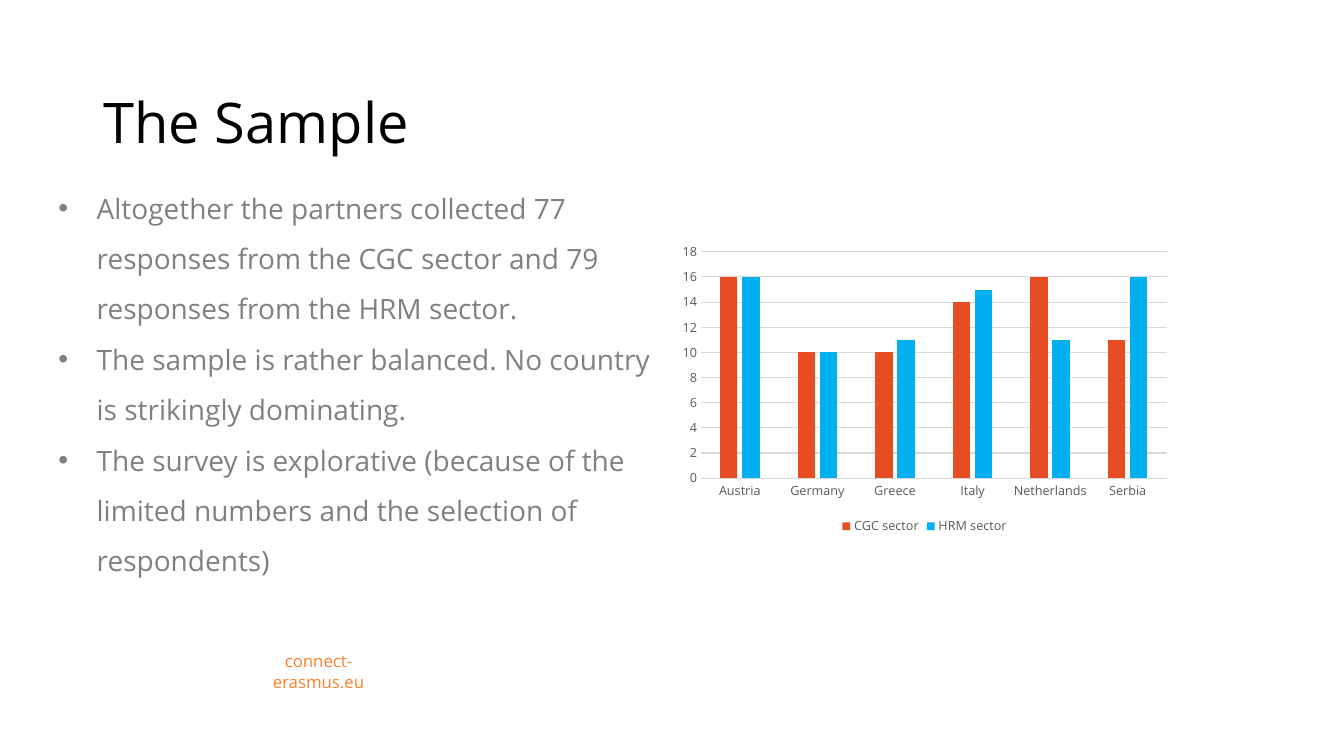
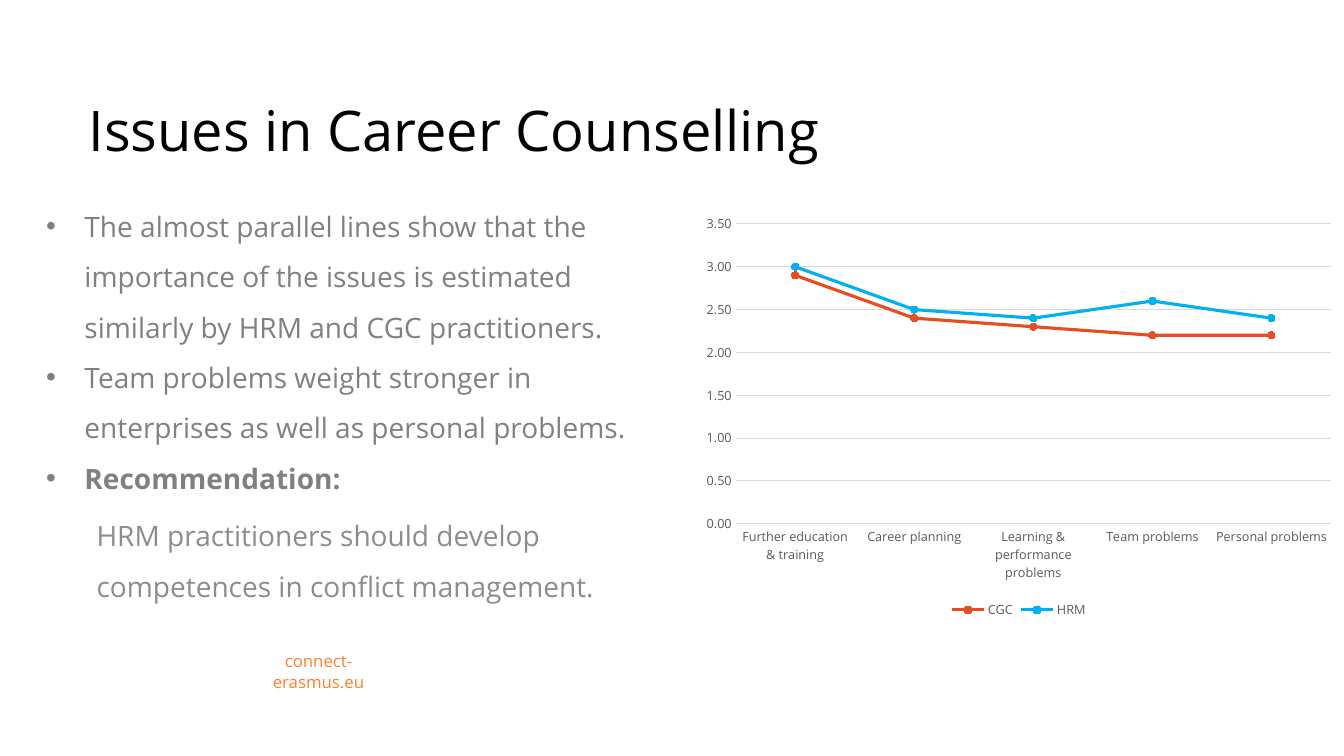
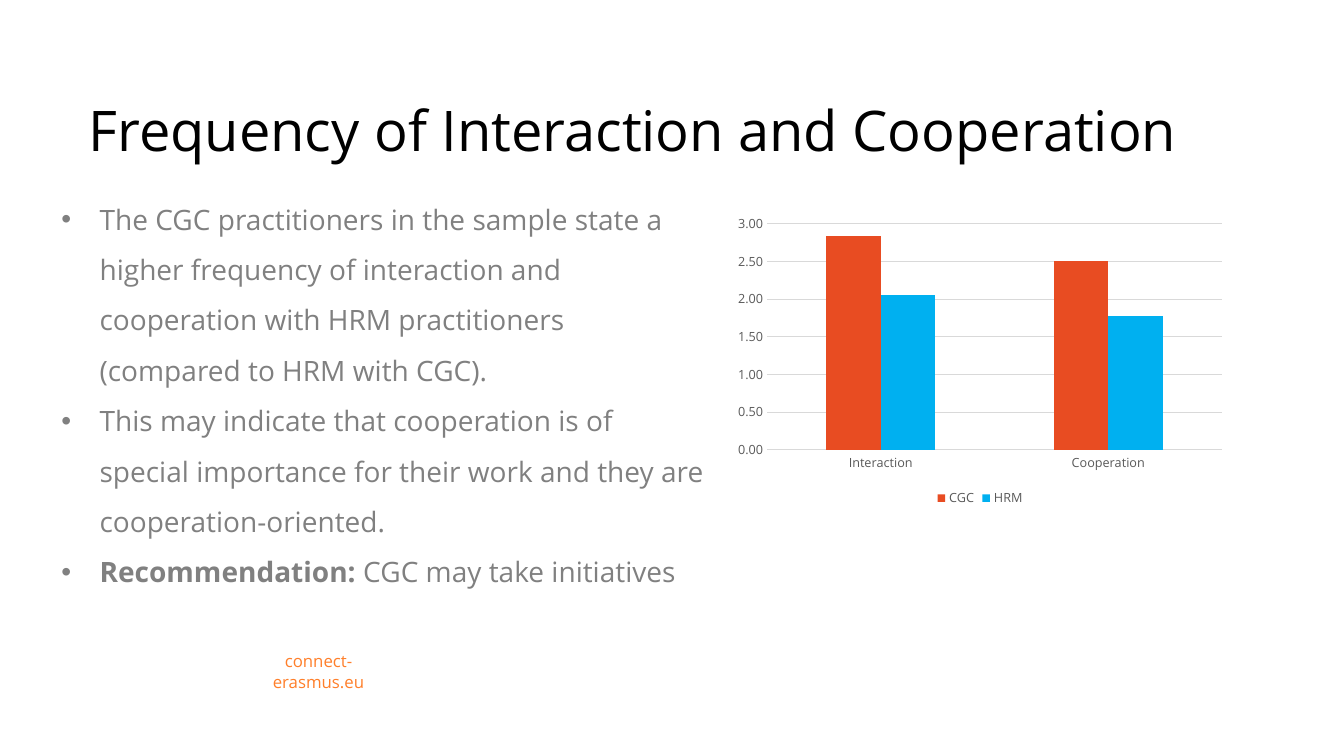
from lxml.etree import SubElement
from pptx import Presentation
from pptx.chart.data import CategoryChartData
from pptx.dml.color import RGBColor
from pptx.enum.chart import (XL_CHART_TYPE, XL_LEGEND_POSITION,
                             XL_MARKER_STYLE, XL_TICK_MARK)
from pptx.enum.text import MSO_ANCHOR, PP_ALIGN
from pptx.oxml.ns import qn
from pptx.util import Inches, Pt

FONT = "Open Sans"
BLACK, BODY_GRAY, NOTE_GRAY = "000000", "808080", "8C8C8C"
AXIS_TEXT, GRID, FOOTER_ORANGE = "595959", "D9D9D9", "FF7F2A"
SERIES_COLORS = ("E84C22", "00B0F0")
TITLE_BOX = (0.78, 0.07, 11.69, 1.6)


def rgb(color):
    return RGBColor.from_string(color)


class Deck:
    def __init__(self):
        self.prs = Presentation()
        self.prs.slide_width, self.prs.slide_height = Inches(13.33), Inches(7.5)
        self.slide = None

    def style(self, font, size, color):
        font.name, font.size = FONT, Pt(size)
        font.color.rgb = rgb(color)

    def start_slide(self, title, title_box=TITLE_BOX):
        self.slide = self.prs.slides.add_slide(self.prs.slide_layouts[6])
        # Title
        heading = self.frame(title_box, MSO_ANCHOR.BOTTOM).paragraphs[0]
        heading.text = title
        heading.line_spacing = 0.9
        self.style(heading.font, 40, BLACK)
        # Footer
        footer = self.frame((2.28, 6.51, 1.76, 0.3), MSO_ANCHOR.MIDDLE).paragraphs[0]
        footer.text = "connect-erasmus.eu"
        footer.alignment = PP_ALIGN.CENTER
        self.style(footer.font, 12, FOOTER_ORANGE)

    def frame(self, box, anchor=MSO_ANCHOR.TOP):
        frame = self.slide.shapes.add_textbox(*map(Inches, box)).text_frame
        frame.word_wrap = True
        frame.vertical_anchor = anchor
        return frame

    def body(self, box, points, note=None):
        """Each point is a pair: bold lead and plain text."""
        frame = self.frame(box)
        for index, (lead, text) in enumerate(points):
            point = frame.paragraphs[0] if index == 0 else frame.add_paragraph()
            self.indent(point, 0.38, bullet="•")
            self.style(point.font, 20, BODY_GRAY)
            if lead:
                bold_lead = point.add_run()
                bold_lead.text = lead
                bold_lead.font.bold = True
            if text:
                point.add_run().text = text
        if note:
            advice = frame.add_paragraph()
            advice.text = note
            self.indent(advice, 0.5)
            advice.space_before = Pt(5)
            self.style(advice.font, 20, NOTE_GRAY)

    def indent(self, paragraph, margin, bullet=None):
        properties = paragraph._p.get_or_add_pPr()
        properties.set("marL", str(Inches(margin)))
        properties.set("indent", str(-Inches(margin) if bullet else 0))
        if bullet:
            SubElement(properties, qn("a:buFont")).set("typeface", "Arial")
            SubElement(properties, qn("a:buChar")).set("char", bullet)
        paragraph.line_spacing = 1.5

    def chart(self, kind, box, categories, series, top, step,
              number_format="###0.00", overlap=0):
        data = CategoryChartData(number_format=number_format)
        data.categories = categories
        for name, values in series.items():
            data.add_series(name, values)
        chart = self.slide.shapes.add_chart(kind, *map(Inches, box), data).chart
        self.style(chart.font, 10, BLACK)
        chart.has_title = False

        # Legend
        chart.has_legend = True
        chart.legend.position = XL_LEGEND_POSITION.BOTTOM
        chart.legend.include_in_layout = False
        self.style(chart.legend.font, 9, AXIS_TEXT)

        # Axes
        scale = chart.value_axis
        for axis in (chart.category_axis, scale):
            axis.major_tick_mark = axis.minor_tick_mark = XL_TICK_MARK.NONE
            self.style(axis.tick_labels.font, 9, AXIS_TEXT)
        scale.minimum_scale, scale.maximum_scale, scale.major_unit = 0, top, step
        scale.tick_labels.number_format = number_format
        scale.tick_labels.number_format_is_linked = False
        scale.format.line.fill.background()
        for line in (chart.category_axis.format.line, scale.major_gridlines.format.line):
            line.color.rgb = rgb(GRID)
            line.width = Pt(0.75)

        # Series
        plot = chart.plots[0]
        plot.vary_by_categories = False
        is_line = kind == XL_CHART_TYPE.LINE_MARKERS
        if not is_line:
            plot.gap_width, plot.overlap = 219, overlap
        for sector, color in zip(plot.series, SERIES_COLORS):
            if is_line:
                sector.smooth = False
                sector.format.line.color.rgb = rgb(color)
                sector.format.line.width = Pt(2.25)
                sector.marker.style, sector.marker.size = XL_MARKER_STYLE.CIRCLE, 5
                sector.marker.format.fill.solid()
                sector.marker.format.fill.fore_color.rgb = rgb(color)
                sector.marker.format.line.color.rgb = rgb(color)
            else:
                sector.format.fill.solid()
                sector.format.fill.fore_color.rgb = rgb(color)


def main():
    deck = Deck()

    # The sample
    deck.start_slide("The Sample", (0.93, 0.84, 4.64, 0.75))
    deck.body((0.48, 1.68, 6.19, 5.23), [
        ("", "Altogether the partners collected 77 responses from the CGC sector "
             "and 79 responses from the HRM sector."),
        ("", "The sample is rather balanced. No country is strikingly dominating."),
        ("", "The survey is explorative (because of the limited numbers and the "
             "selection of respondents)"),
    ])
    deck.chart(
        XL_CHART_TYPE.COLUMN_CLUSTERED, (6.67, 2.35, 5, 3),
        ["Austria", "Germany", "Greece", "Italy", "Netherlands", "Serbia"],
        {"CGC sector": (16, 10, 10, 14, 16, 11),
         "HRM sector": (16, 10, 11, 15, 11, 16)},
        top=18, step=2, number_format="General", overlap=-27)

    # Issues
    deck.start_slide("Issues in Career Counselling")
    deck.body((0.36, 1.86, 6, 4.45), [
        ("", "The almost parallel lines show that the importance of the issues is "
             "estimated similarly by HRM and CGC practitioners."),
        ("", "Team problems weight stronger in enterprises as well as personal problems."),
        ("Recommendation:", ""),
    ], note="HRM practitioners should develop competences in conflict management.")
    deck.chart(
        XL_CHART_TYPE.LINE_MARKERS, (6.88, 2.05, 6.45, 4.13),
        ["Further education & training", "Career planning",
         "Learning & performance problems", "Team problems", "Personal problems"],
        {"CGC": (2.9, 2.4, 2.3, 2.2, 2.2), "HRM": (3, 2.5, 2.4, 2.6, 2.4)},
        top=3.5, step=0.5)

    # Interaction and cooperation
    deck.start_slide("Frequency of Interaction and Cooperation")
    deck.body((0.51, 1.79, 6.57, 4.6), [
        ("", "The CGC practitioners in the sample state a higher frequency of "
             "interaction and cooperation with HRM practitioners (compared to HRM "
             "with CGC)."),
        ("", "This may indicate that cooperation is of special importance for their "
             "work and they are cooperation-oriented."),
        ("Recommendation: ", "CGC may take initiatives"),
    ])
    deck.chart(
        XL_CHART_TYPE.COLUMN_CLUSTERED, (7.22, 2.07, 5, 3),
        ["Interaction", "Cooperation"],
        {"CGC": (2.83, 2.5), "HRM": (2.05, 1.77)},
        top=3, step=0.5)

    deck.prs.save("out.pptx")


if __name__ == "__main__":
    main()
